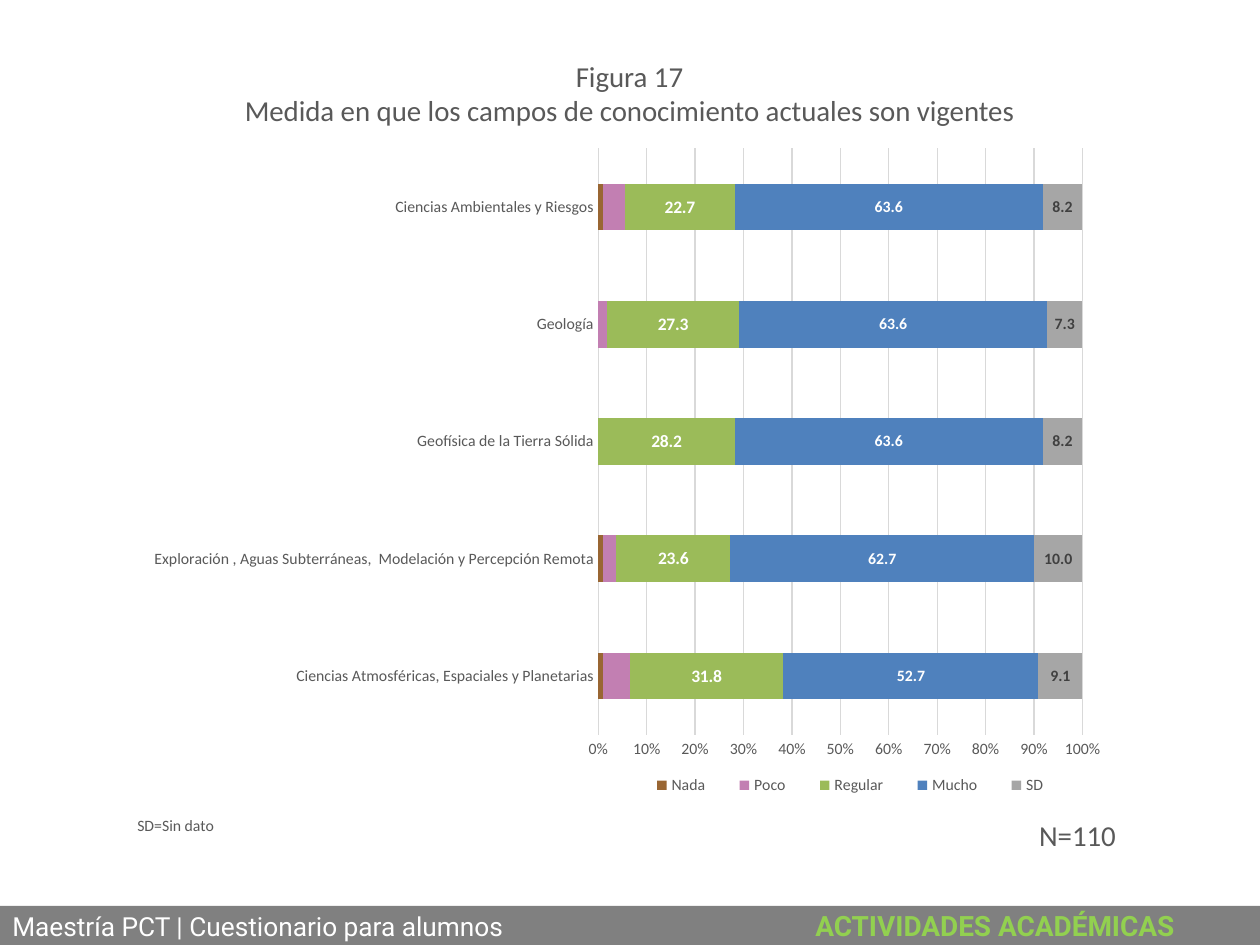
import pptx
import pptx.chart.data
import pptx.dml.color
import pptx.enum.chart
import pptx.enum.shapes
import pptx.enum.text
import pptx.oxml
import pptx.oxml.ns
import pptx.util

PX_PER_INCH = 126
GREY, GRID, WHITE = "595959", "D9D9D9", "FFFFFF"
ALIGN = pptx.enum.text.PP_ALIGN

CATEGORIES = [
    "Ciencias Atmosféricas, Espaciales y Planetarias",
    "Exploración , Aguas Subterráneas,  Modelación y Percepción Remota",
    "Geofísica de la Tierra Sólida",
    "Geología",
    "Ciencias Ambientales y Riesgos",
]
# Name, fill, values, label size and label colour (None: no labels)
SERIES = [
    ("Nada", "996633", (1, 1, 0, 0, 1), None, None),
    ("Poco", "C27FB2", (5.5, 2.7, 0, 1.8, 4.5), None, None),
    ("Regular", "9BBB59", (31.8, 23.6, 28.2, 27.3, 22.7), 10, WHITE),
    ("Mucho", "4F81BD", (52.7, 62.7, 63.6, 63.6, 63.6), 9, WHITE),
    ("SD", "A6A6A6", (9.1, 10, 8.2, 7.3, 8.2), 9, "404040"),
]


def px(length):
    return pptx.util.Emu(round(length * 914400 / PX_PER_INCH))


def color(value):
    return pptx.dml.color.RGBColor.from_string(value)


def set_font(font, size, value, name="Calibri", bold=False):
    font.size = pptx.util.Pt(size)
    font.name = name
    font.bold = bold
    font.color.rgb = color(value)


def add_span(para, text, *style):
    span = para.add_run()
    span.text = text
    set_font(span.font, *style)


def add_text(page, box, lines, size, wrap):
    frame = page.shapes.add_textbox(*map(px, box)).text_frame
    frame.word_wrap = wrap
    for index, line in enumerate(lines):
        para = frame.add_paragraph() if index else frame.paragraphs[0]
        para.alignment = ALIGN.CENTER
        add_span(para, line, size, GREY)


def place_part(parent, successors, box, inner=False):
    """Fix a chart part at a box given as fractions of the chart."""
    target = '<c:layoutTarget val="inner"/>' if inner else ""
    modes = "".join(f'<c:{key}Mode val="edge"/>' for key in "xy")
    sizes = "".join(f'<c:{key} val="{value}"/>' for key, value in zip("xywh", box))
    layout = pptx.oxml.parse_xml(
        f'<c:layout {pptx.oxml.ns.nsdecls("c")}><c:manualLayout>'
        f"{target}{modes}{sizes}</c:manualLayout></c:layout>")
    for old in parent.findall(pptx.oxml.ns.qn("c:layout")):
        parent.remove(old)
    parent.insert_element_before(layout, *successors)


def style_axis(axis):
    axis.major_tick_mark = pptx.enum.chart.XL_TICK_MARK.NONE
    axis.minor_tick_mark = pptx.enum.chart.XL_TICK_MARK.NONE
    set_font(axis.tick_labels.font, 9, GREY)


def add_bars(page, box):
    data = pptx.chart.data.CategoryChartData(number_format="###0.0")
    data.categories = CATEGORIES
    for name, _, values, _, _ in SERIES:
        data.add_series(name, values)
    chart = page.shapes.add_chart(
        pptx.enum.chart.XL_CHART_TYPE.BAR_STACKED_100, *map(px, box), data).chart
    chart.has_title = False
    set_font(chart.font, 10, "000000")

    # Bars and their labels
    plot = chart.plots[0]
    plot.gap_width, plot.overlap = 150, 100
    plot.vary_by_categories = False
    for series, (_, fill, _, size, ink) in zip(plot.series, SERIES):
        series.format.fill.solid()
        series.format.fill.fore_color.rgb = color(fill)
        series.invert_if_negative = False
        if size:
            labels = series.data_labels
            labels.show_value = True
            labels.number_format = "###0.0"
            labels.number_format_is_linked = False
            set_font(labels.font, size, ink, "Calibri", True)

    # Axes
    style_axis(chart.category_axis)
    style_axis(chart.value_axis)
    chart.value_axis.tick_labels.number_format = "0%"
    chart.value_axis.tick_labels.number_format_is_linked = False
    chart.value_axis.major_unit = 0.1
    chart.value_axis.maximum_scale = 1
    chart.value_axis.minimum_scale = 0
    chart.value_axis.format.line.fill.background()
    for line in (chart.category_axis.format.line,
                 chart.value_axis.major_gridlines.format.line):
        line.color.rgb = color(GRID)
        line.width = pptx.util.Pt(0.75)

    # Legend and plot area
    chart.has_legend = True
    legend = chart.legend
    legend.position = pptx.enum.chart.XL_LEGEND_POSITION.BOTTOM
    legend.include_in_layout = False
    set_font(legend.font, 9, GREY)
    place_part(legend._element, ("c:overlay", "c:spPr", "c:txPr"),
               (0.5, 0.94, 0.45, 0.05))
    area = plot._element.getparent()
    for old in area.findall(pptx.oxml.ns.qn("c:layout")):
        area.remove(old)
    area.insert(0, pptx.oxml.parse_xml(
        f'<c:layout {pptx.oxml.ns.nsdecls("c")}/>'))
    fill_plot_layout(area)


def fill_plot_layout(area):
    place_part(area, ("c:barChart",), (0.47, 0.02, 0.49, 0.87), inner=True) \
        if hasattr(area, "insert_element_before") else None


def add_footer(page, box):
    bar = page.shapes.add_shape(
        pptx.enum.shapes.MSO_SHAPE.RECTANGLE, *map(px, box))
    bar.shadow.inherit = False
    bar.fill.solid()
    bar.fill.fore_color.rgb = color("808080")
    bar.line.fill.background()
    frame = bar.text_frame
    frame.word_wrap = True
    frame.vertical_anchor = pptx.enum.text.MSO_ANCHOR.MIDDLE
    para = frame.paragraphs[0]
    para.alignment = ALIGN.LEFT
    para._p.get_or_add_pPr().append(pptx.oxml.parse_xml(
        f'<a:tabLst {pptx.oxml.ns.nsdecls("a")}>'
        f'<a:tab pos="{px(803)}" algn="l"/></a:tabLst>'))
    add_span(para, "Maestría PCT | Cuestionario para alumnos", 15, WHITE, "Roboto")
    add_span(para, "\tACTIVIDADES ACADÉMICAS", 16, "92D050", "Roboto", True)


def main():
    deck = pptx.Presentation()
    deck.slide_width, deck.slide_height = px(1260), px(945)
    page = deck.slides.add_slide(deck.slide_layouts[6])
    add_text(page, (1026, 811, 103, 48), ["N=110"], 16.5, False)
    add_footer(page, (0, 906, 1260, 39))
    add_text(page, (117, 810, 117, 32), ["SD=Sin dato"], 9, True)
    add_bars(page, (134, 135, 988, 674))
    add_text(page, (227, 52, 805, 83), [
        "Figura 17",
        "Medida en que los campos de conocimiento actuales son vigentes",
    ], 16.5, False)
    deck.save("out.pptx")


if __name__ == "__main__":
    main()
